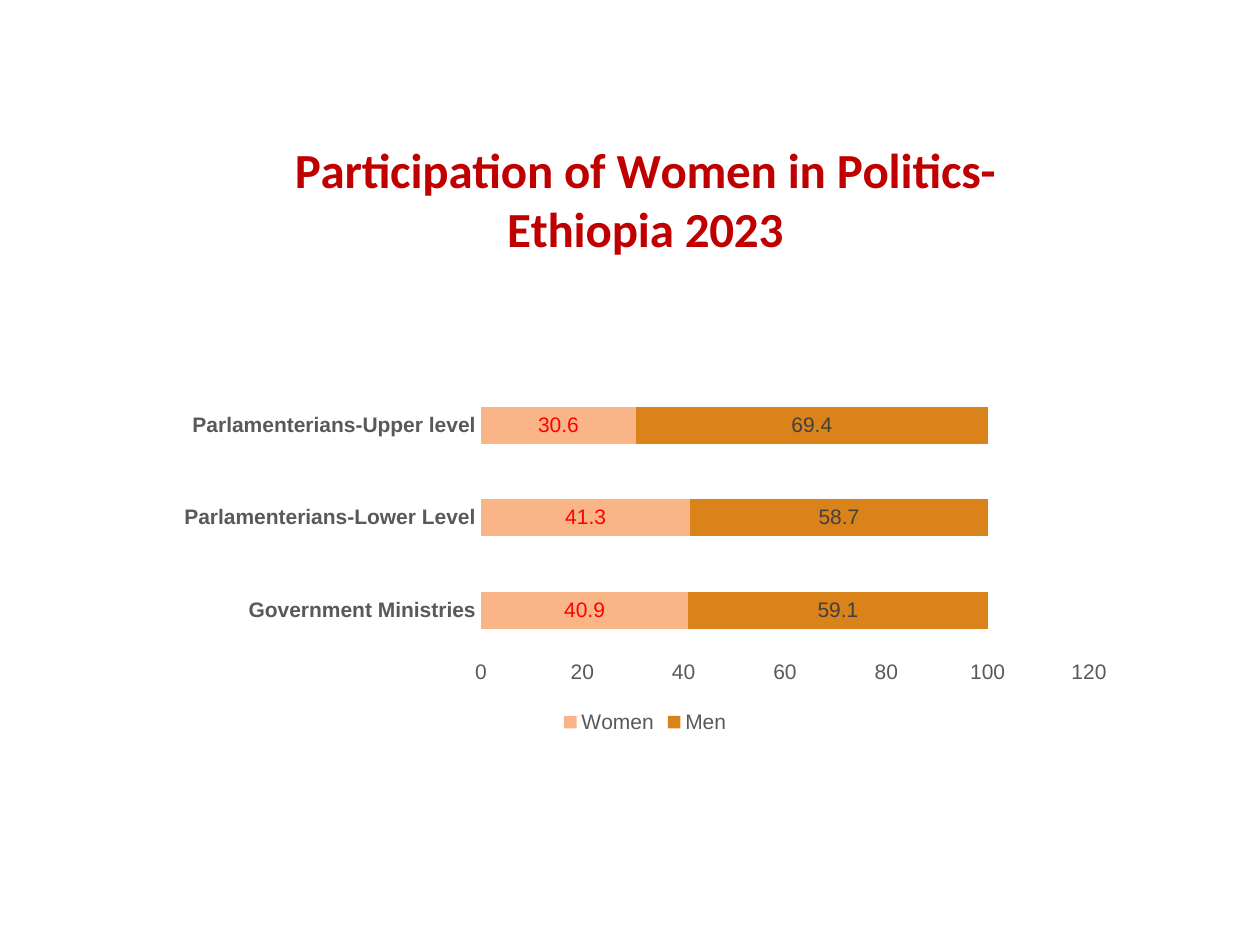
from lxml import etree
from pptx import Presentation
from pptx import util as u
from pptx.chart import data as cd
from pptx.dml.color import RGBColor
from pptx.enum import chart as ch
from pptx.oxml import ns

COLORS = {"title": "C00000", "axis": "595959", "women": "F9B488", "men": "DB831B",
          "women_label": "FF0000", "men_label": "404040"}
CATEGORIES = ["Government Ministries", "Parlamenterians-Lower Level", "Parlamenterians-Upper level"]
SERIES = {"Women": (40.9, 41.3, 30.6), "Men": (59.1, 58.7, 69.4)}


def set_font(font, color, size=12, bold=False, name="Arial"):
    """Set the face, size, weight and colour of a font."""
    font.name, font.size, font.bold = name, u.Pt(size), bold
    font.color.rgb = RGBColor.from_string(COLORS[color])


def place_plot(chart, **fractions):
    """Fix the inner plot area at fractions of the chart box."""
    area = chart.plots[0]._element.getparent()
    for old in area.findall(ns.qn("c:layout")):
        area.remove(old)
    layout = etree.Element(ns.qn("c:layout"))
    manual = etree.SubElement(layout, ns.qn("c:manualLayout"))
    values = {"layoutTarget": "inner", "xMode": "edge", "yMode": "edge", **fractions}
    for tag, value in values.items():
        etree.SubElement(manual, ns.qn(f"c:{tag}")).set("val", str(value))
    area.insert(0, layout)


def add_participation_chart(s, left, top, width, height):
    """Add the stacked bar chart with its title and legend to the given box."""
    data = cd.CategoryChartData(number_format="General")
    data.categories = CATEGORIES
    for name, values in SERIES.items():
        data.add_series(name, values)
    chart = s.shapes.add_chart(ch.XL_CHART_TYPE.BAR_STACKED, left, top, width, height, data).chart
    chart.font.name, chart.font.size = "Arial", u.Pt(10)

    chart.has_title = True
    p = chart.chart_title.text_frame.paragraphs[0]
    p.text = "Participation of Women in Politics-Ethiopia 2023"
    set_font(p.font, "title", 28, True, "Calibri")
    set_font(p.runs[0].font, "title", 28, True, "Calibri")
    chart.chart_title.include_in_layout = False

    for axis, bold in ((chart.category_axis, True), (chart.value_axis, False)):
        axis.has_major_gridlines = False
        axis.major_tick_mark = axis.minor_tick_mark = ch.XL_TICK_MARK.NONE
        axis.format.line.fill.background()
        set_font(axis.tick_labels.font, "axis", bold=bold)
    chart.value_axis.minimum_scale = 0
    chart.value_axis.maximum_scale = 120
    chart.value_axis.major_unit = 20

    plot = chart.plots[0]
    plot.gap_width, plot.overlap, plot.vary_by_categories = 150, 100, False
    for series in plot.series:
        key = series.name.lower()
        series.format.fill.solid()
        series.format.fill.fore_color.rgb = RGBColor.from_string(COLORS[key])
        labels = series.data_labels
        labels.show_value = True
        set_font(labels.font, f"{key}_label")

    chart.has_legend = True
    chart.legend.position = ch.XL_LEGEND_POSITION.BOTTOM
    chart.legend.include_in_layout = False
    set_font(chart.legend.font, "axis")
    place_plot(chart, x=0.33, y=0.43, w=0.63, h=0.44)


def main():
    """Build and save the slide."""
    prs = Presentation()
    prs.slide_width, prs.slide_height = u.Inches(10), u.Inches(7.5)
    s = prs.slides.add_slide(prs.slide_layouts[6])
    add_participation_chart(s, u.Inches(1.29), u.Inches(0.86), u.Inches(7.66), u.Inches(5))
    prs.save("out.pptx")


if __name__ == "__main__":
    main()
